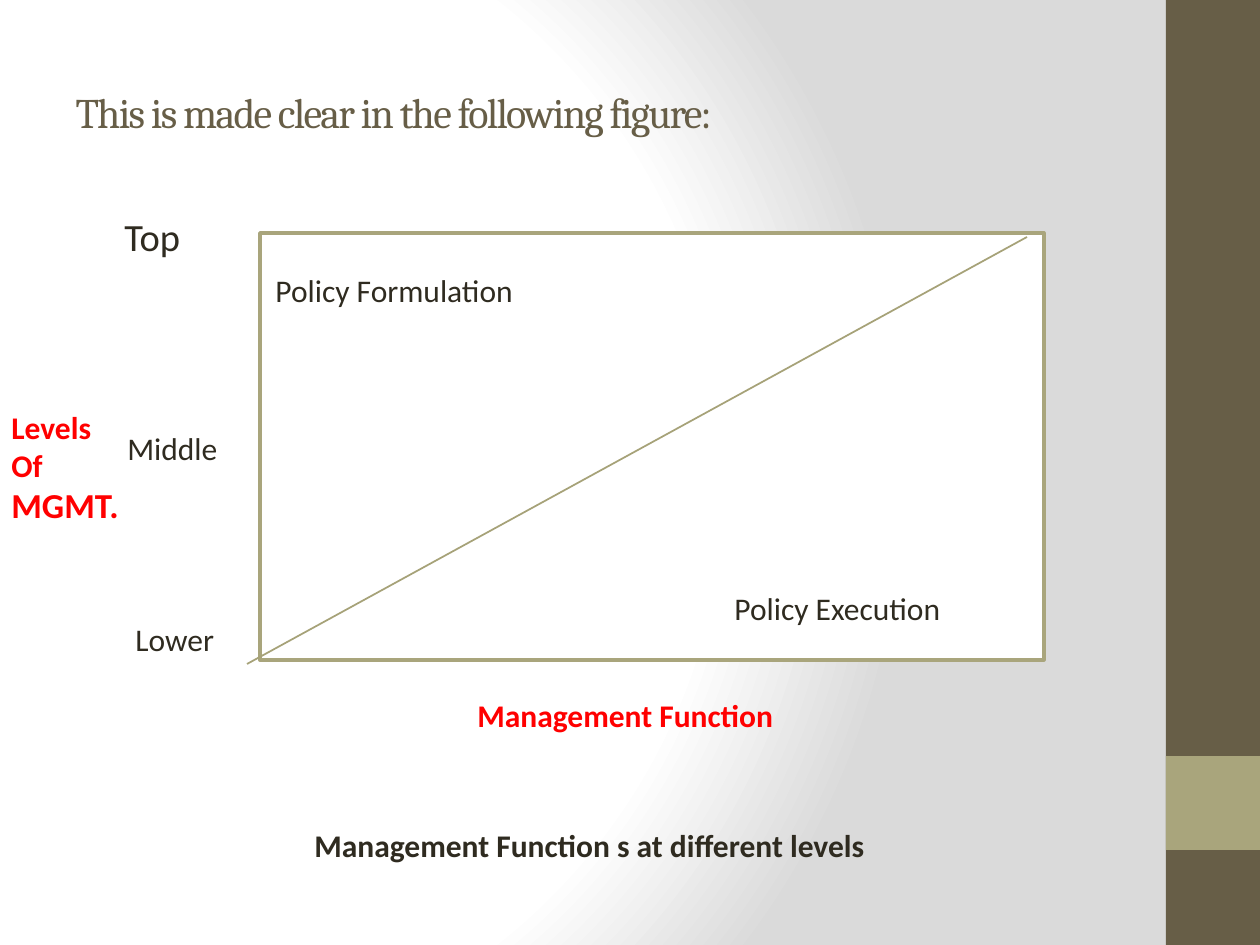
from lxml.etree import SubElement
from pptx import Presentation
from pptx.dml.color import RGBColor
from pptx.enum.shapes import MSO_CONNECTOR, MSO_SHAPE
from pptx.enum.text import MSO_ANCHOR, PP_ALIGN
from pptx.oxml import parse_xml
from pptx.oxml.ns import nsdecls, qn
from pptx.util import Emu, Pt

BROWN = RGBColor(0x67, 0x5E, 0x47)
OLIVE = RGBColor(0xA9, 0xA5, 0x7C)
DIAGONAL_OLIVE = RGBColor(0xA6, 0xA2, 0x78)
INK = RGBColor(0x2F, 0x2B, 0x20)
RED = RGBColor(0xFF, 0x00, 0x00)
WHITE = RGBColor(0xFF, 0xFF, 0xFF)


def px(length):
    return Emu(round(length * 914400 / 126))


def add_run(paragraph, text, size, color, bold=False, font_name="Calibri"):
    run = paragraph.add_run()
    run.text = text
    run.font.name = font_name
    run.font.size = Pt(size)
    run.font.bold = bold
    run.font.color.rgb = color
    return run


presentation = Presentation()
presentation.slide_width = px(1260)
presentation.slide_height = px(945)
slide = presentation.slides.add_slide(presentation.slide_layouts[5])

slide.background.fill.solid()
background_properties = slide.element.find(".//" + qn("p:bgPr"))
solid_fill = background_properties.find(qn("a:solidFill"))
gradient_fill = parse_xml(
    f'<a:gradFill {nsdecls("a")} rotWithShape="1"><a:gsLst>'
    '<a:gs pos="0"><a:srgbClr val="FFFFFF"/></a:gs>'
    '<a:gs pos="75000"><a:srgbClr val="FFFFFF"/></a:gs>'
    '<a:gs pos="100000"><a:srgbClr val="DADADA"/></a:gs>'
    '</a:gsLst><a:path path="circle">'
    '<a:fillToRect l="20000" t="50000" r="100000" b="50000"/>'
    '</a:path></a:gradFill>'
)
background_properties.replace(solid_fill, gradient_fill)

rectangles = [
    (1166, 0, 94, 945, BROWN, None),
    (1166, 756, 94, 94, OLIVE, None),
    (260, 233, 784, 427, WHITE, OLIVE),
]
for left, top, width, height, fill_color, line_color in rectangles:
    shape = slide.shapes.add_shape(
        MSO_SHAPE.RECTANGLE, px(left), px(top), px(width), px(height)
    )
    shape.shadow.inherit = False
    shape.fill.solid()
    shape.fill.fore_color.rgb = fill_color
    if line_color is None:
        shape.line.fill.background()
    else:
        shape.line.color.rgb = line_color
        shape.line.width = Pt(2)

diagonal = slide.shapes.add_connector(
    MSO_CONNECTOR.STRAIGHT, px(247), px(664), px(1027), px(237)
)
diagonal.line.color.rgb = DIAGONAL_OLIVE
diagonal.line.width = Pt(1)
SubElement(diagonal.element.spPr, qn("a:effectLst"))

title = slide.shapes.title
title.left, title.top, title.width, title.height = px(63), px(38), px(1092), px(147)
title.text_frame.vertical_anchor = MSO_ANCHOR.MIDDLE
title_paragraph = title.text_frame.paragraphs[0]
title_paragraph.alignment = PP_ALIGN.LEFT
title_run = add_run(
    title_paragraph, "This is made clear in the following figure:", 24, BROWN,
    font_name="Cambria",
)
title_run.font._element.set("spc", "-100")

labels = [
    (112, 207, 130, 60, INK, False, [[("Top", 22)]]),
    (263, 265, 397, 50, INK, False, [[("Policy Formulation", 18)]]),
    (722, 583, 248, 50, INK, False, [[("Policy Execution", 18)]]),
    (123, 614, 118, 50, INK, False, [[("Lower", 18)]]),
    (115, 423, 127, 50, INK, False, [[("Middle", 18)]]),
    (-1, 402, 139, 131, RED, True, [[("Levels", 18)], [("Of ", 18), ("MGMT.", 20)]]),
    (465, 690, 422, 50, RED, True, [[("Management Function", 18)]]),
    (302, 820, 583, 50, INK, True, [[("Management Function s at different levels", 18)]]),
]
for left, top, width, height, color, bold, lines in labels:
    text_box = slide.shapes.add_textbox(px(left), px(top), px(width), px(height))
    text_frame = text_box.text_frame
    text_frame.word_wrap = True
    for index, runs in enumerate(lines):
        paragraph = text_frame.add_paragraph() if index else text_frame.paragraphs[0]
        for text, size in runs:
            add_run(paragraph, text, size, color, bold)

presentation.save("out.pptx")
